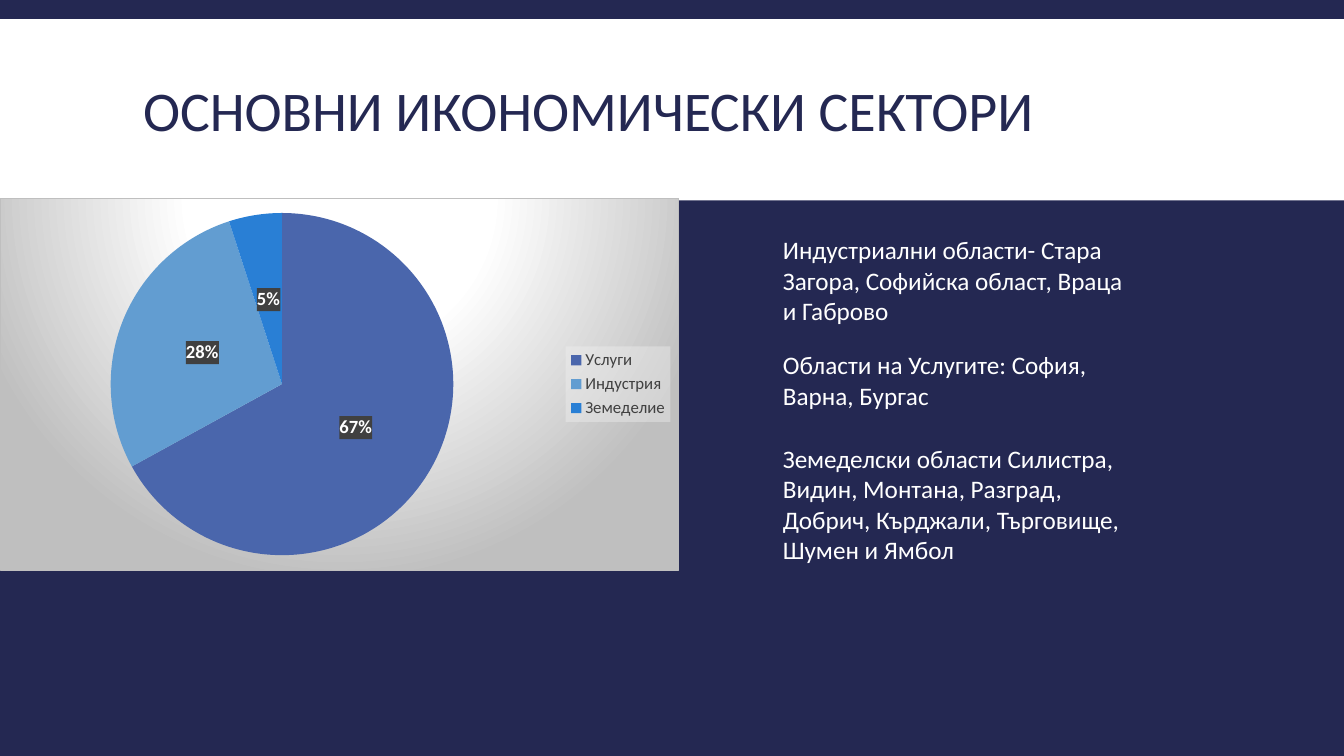
"""Slide with the main economic sectors: a pie chart and notes on regions."""
from lxml.etree import fromstring
from pptx import Presentation
from pptx.chart.data import CategoryChartData
from pptx.dml.color import RGBColor
from pptx.enum.chart import XL_CHART_TYPE, XL_LABEL_POSITION, XL_LEGEND_POSITION
from pptx.enum.shapes import MSO_SHAPE
from pptx.enum.text import MSO_ANCHOR, PP_ALIGN
from pptx.util import Cm, Pt

NAVY = RGBColor(0x24, 0x28, 0x52)
WHITE = RGBColor(0xFF, 0xFF, 0xFF)
GREY = RGBColor(0x40, 0x40, 0x40)
BLUES = [RGBColor(0x4A, 0x66, 0xAC), RGBColor(0x62, 0x9D, 0xD1), RGBColor(0x29, 0x7F, 0xD5)]

SECTORS = {"Услуги ": 67, "Индустрия": 28, "Земеделие": 5}
NOTES = [
    (5.79, 2.57, "Индустриални области- Стара Загора, Софийска област, Враца и Габрово"),
    (8.69, 1.8, "Области на Услугите: София, Варна, Бургас"),
    (11.05, 3.33, "Земеделски области Силистра, Видин, Монтана, Разград, "
                  "Добрич, Кърджали, Търговище, Шумен и Ямбол"),
]

SPACES = ('xmlns:c="http://schemas.openxmlformats.org/drawingml/2006/chart" '
          'xmlns:a="http://schemas.openxmlformats.org/drawingml/2006/main"')
GLOW = ('<a:gradFill><a:gsLst><a:gs pos="0"><a:srgbClr val="FFFFFF"/></a:gs>'
        '<a:gs pos="39000"><a:srgbClr val="FFFFFF"/></a:gs>'
        '<a:gs pos="100000"><a:srgbClr val="BFBFBF"/></a:gs></a:gsLst>'
        '<a:path path="circle"><a:fillToRect l="50000" t="-80000" r="50000" b="180000"/>'
        '</a:path></a:gradFill><a:ln w="9525"><a:solidFill><a:srgbClr val="BFBFBF"/>'
        '</a:solidFill></a:ln>')
VEIL = '<a:solidFill><a:srgbClr val="F2F2F2"><a:alpha val="39000"/></a:srgbClr></a:solidFill>'
DARK = '<a:solidFill><a:srgbClr val="404040"/></a:solidFill>'
PLOT = ('<c:manualLayout><c:layoutTarget val="inner"/><c:xMode val="edge"/><c:yMode val="edge"/>'
        '<c:x val="0.16"/><c:y val="0.04"/><c:w val="0.51"/><c:h val="0.92"/></c:manualLayout>')


def node(tag, inner):
    """Build one chart element from its inner markup."""
    return fromstring(f"<c:{tag} {SPACES}>{inner}</c:{tag}>")


def apply(item, values):
    """Set each named value on the item."""
    for name, value in values.items():
        setattr(item, name, value)


class Deck:
    """Holds the style and the current slide."""

    face = "Calibri"

    def __init__(self):
        """Start a wide deck with one title slide on navy."""
        self.file = Presentation()
        apply(self.file, {"slide_width": Cm(33.87), "slide_height": Cm(19.05)})
        self.slide = self.file.slides.add_slide(self.file.slide_layouts[5])
        self.shapes = self.slide.shapes
        fill = self.slide.background.fill
        fill.solid()
        fill.fore_color.rgb = NAVY

    def style(self, font, size, color, bold=False):
        """Give a font the deck face, a size and a colour."""
        apply(font, {"name": self.face, "size": Pt(size), "bold": bold})
        font.color.rgb = color

    def label(self, shape, text, size, color):
        """Fill a shape with one styled paragraph."""
        frame = shape.text_frame
        frame.text = text
        frame.word_wrap = True
        para = frame.paragraphs[0]
        para.alignment = PP_ALIGN.LEFT
        self.style(para.runs[0].font, size, color)
        return frame, para

    def band(self, top, height):
        """Lay a white band behind the title."""
        band = self.shapes.add_shape(MSO_SHAPE.RECTANGLE, 0, Cm(top),
                                     self.file.slide_width, Cm(height))
        band.shadow.inherit = False
        band.fill.solid()
        band.fill.fore_color.rgb = WHITE
        band.line.fill.background()
        self.shapes.title.element.addprevious(band.element)

    def title(self, text):
        """Place and fill the title."""
        title = self.shapes.title
        apply(title, {"left": Cm(3.35), "top": Cm(0.79), "width": Cm(27.18), "height": Cm(4.19)})
        frame, para = self.label(title, text, 40, NAVY)
        frame.vertical_anchor = MSO_ANCHOR.MIDDLE
        para.line_spacing = 0.85

    def note(self, top, height, text):
        """Add a note in the right column."""
        box = self.shapes.add_textbox(Cm(19.48), Cm(top), Cm(9.14), Cm(height))
        self.label(box, text, 18, WHITE)

    def pie(self, sectors):
        """Add the pie chart with its legend and labels."""
        data = CategoryChartData(number_format="General")
        data.categories = list(sectors)
        data.add_series("Series 1", list(sectors.values()))
        chart = self.shapes.add_chart(XL_CHART_TYPE.PIE, 0, Cm(4.98), Cm(17.12), Cm(9.4),
                                      data).chart
        apply(chart, {"has_title": False, "has_legend": True})
        self.style(chart.font, 10, WHITE)
        root = chart.element
        root.find("{*}chart").addnext(node("spPr", GLOW))
        area = root.find(".//{*}plotArea")
        for old in area.findall("{*}layout"):
            area.remove(old)
        area.insert(0, node("layout", PLOT))

        legend = chart.legend
        apply(legend, {"position": XL_LEGEND_POSITION.RIGHT, "include_in_layout": False})
        self.style(legend.font, 12, GREY)
        root.find(".//{*}legend/{*}overlay").addnext(node("spPr", VEIL))

        plot = chart.plots[0]
        plot.vary_by_categories = True
        for spot, color in enumerate(BLUES):
            fill = plot.series[0].points[spot].format.fill
            fill.solid()
            fill.fore_color.rgb = color
        labels = plot.series[0].data_labels
        apply(labels, {"show_percentage": True, "show_value": False, "number_format": "0%",
                       "number_format_is_linked": False, "position": XL_LABEL_POSITION.CENTER})
        self.style(labels.font, 13.3, WHITE, True)
        root.find(".//{*}dLbls/{*}numFmt").addnext(node("spPr", DARK))


def main():
    """Build and save the slide."""
    deck = Deck()
    deck.band(0.48, 4.57)
    deck.title("ОСНОВНИ ИКОНОМИЧЕСКИ СЕКТОРИ")
    deck.pie(SECTORS)
    for note in NOTES:
        deck.note(*note)
    deck.file.save("out.pptx")


if __name__ == "__main__":
    main()
